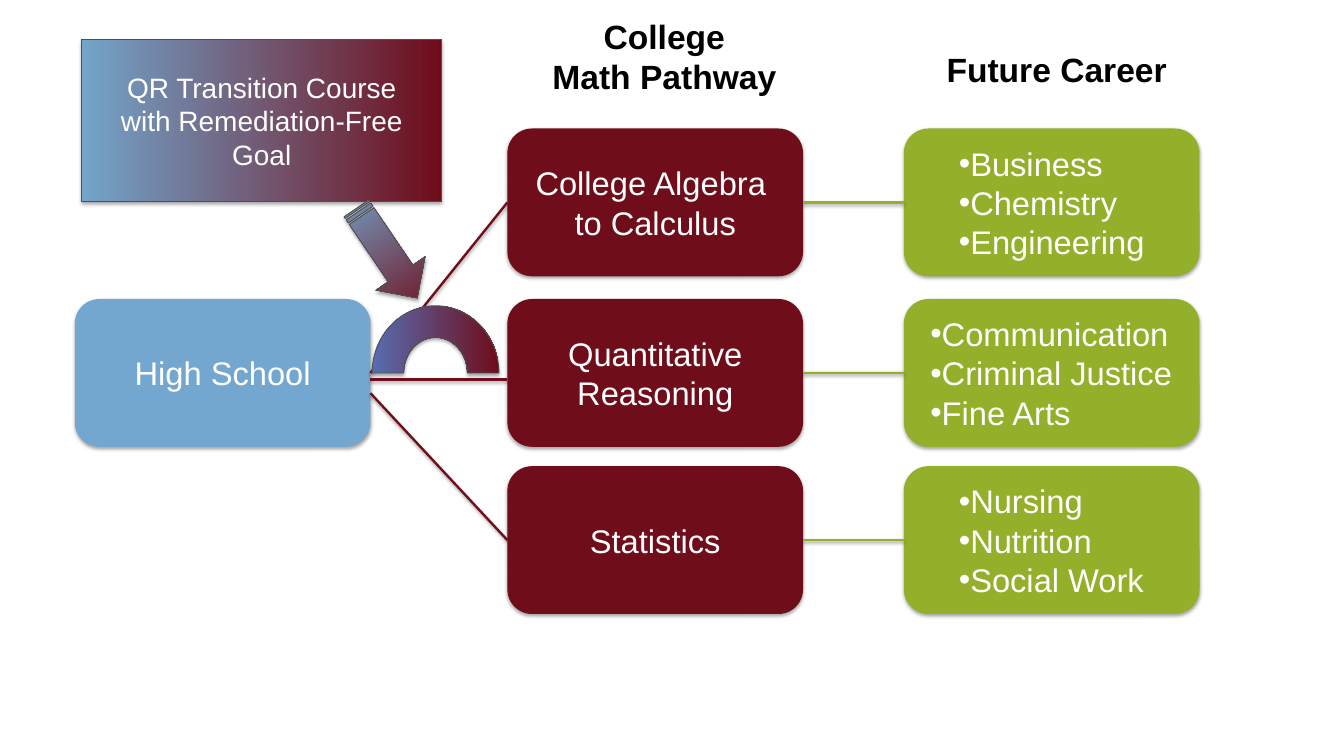
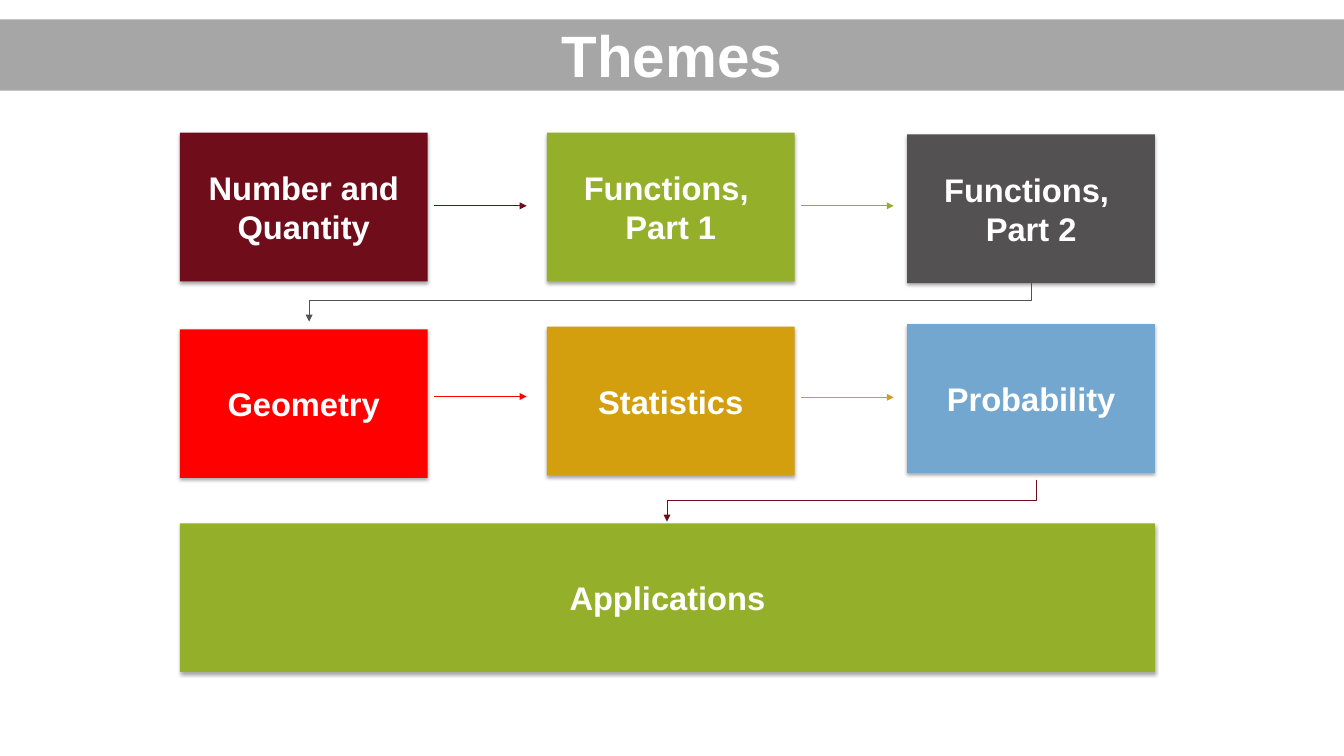
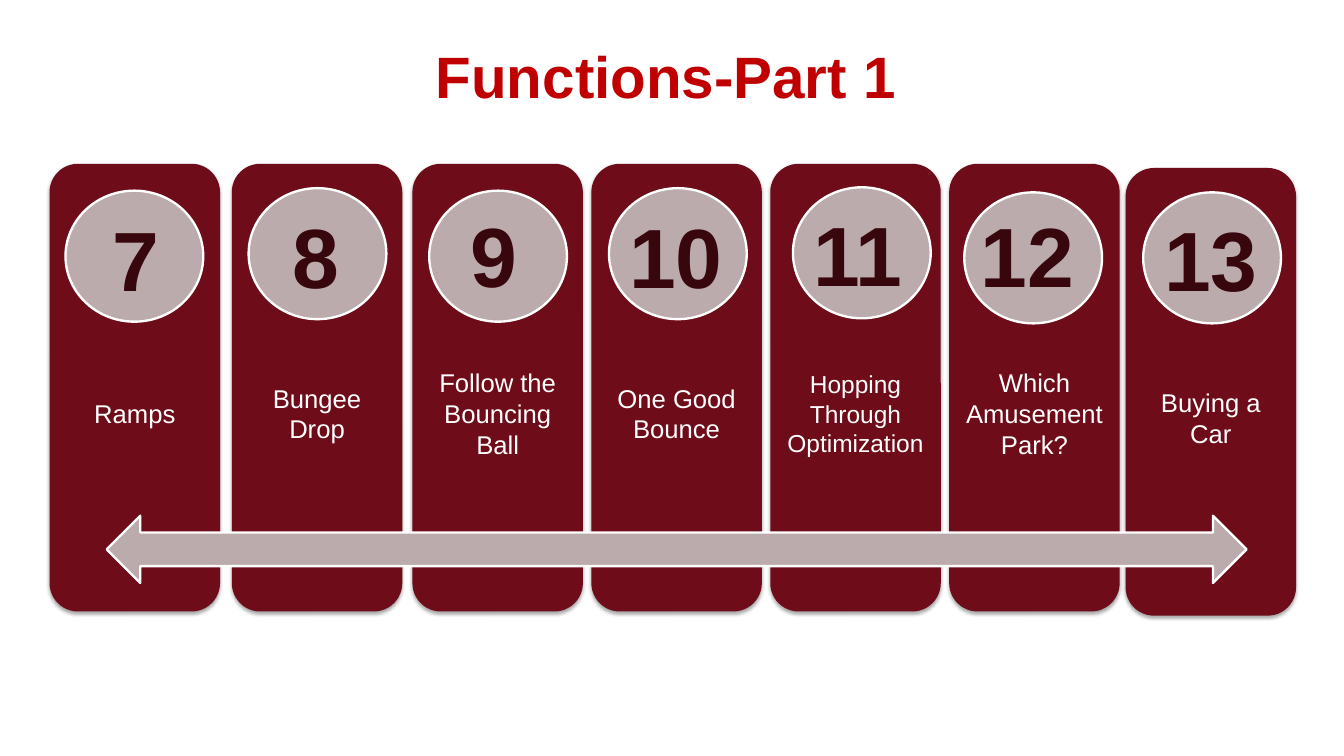
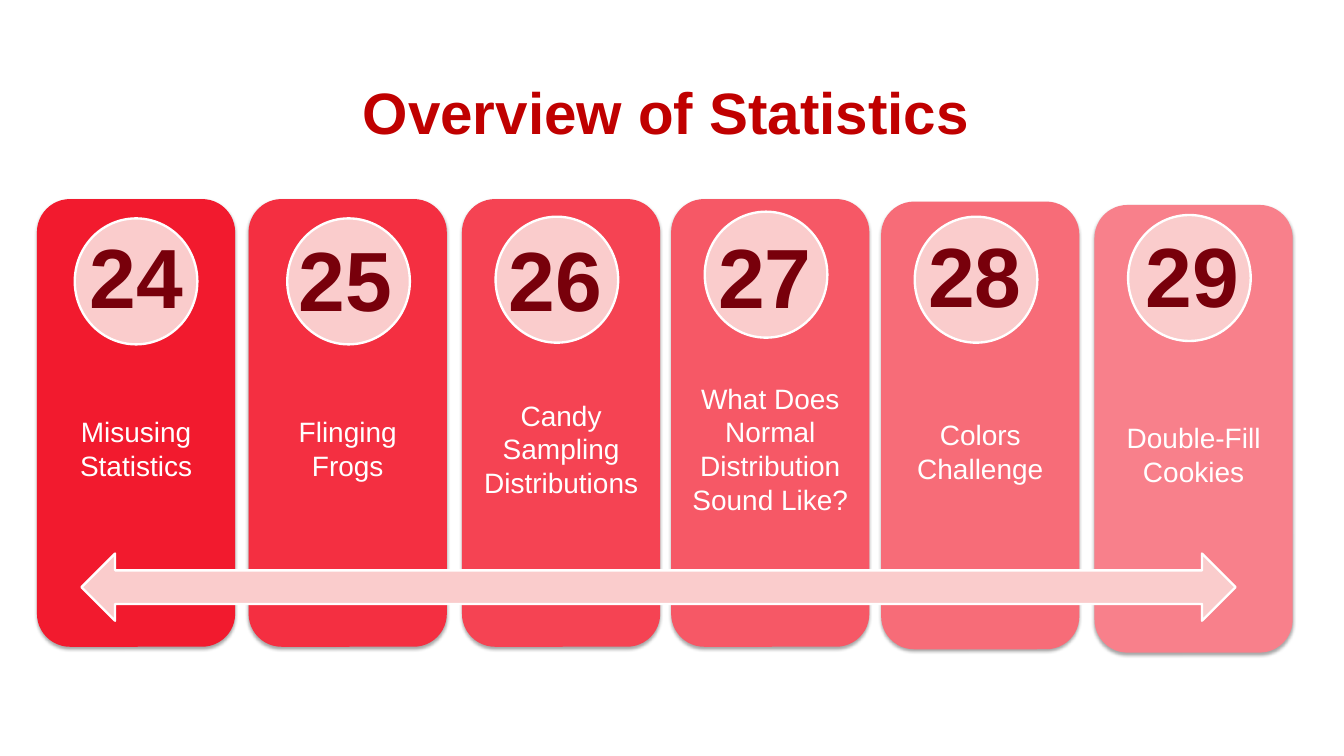
from lxml.etree import SubElement
from pptx import Presentation
from pptx.dml.color import RGBColor
from pptx.enum.shapes import MSO_CONNECTOR, MSO_SHAPE
from pptx.enum.text import MSO_ANCHOR, MSO_AUTO_SIZE, PP_ALIGN
from pptx.oxml.ns import qn
from pptx.util import Inches, Pt

FONT = "Arial"
WHITE, BLACK, MAROON, GREEN = "FFFFFF", "000000", "700D1B", "94AF2A"
BLUE, GRAY, RED, GOLD = "74A7CF", "535151", "FF0000", "D49F0F"
BAND, TITLE_RED, EDGE = "A6A6A6", "C00000", "514E4E"
CARD, BLEND_BLUE, ARC_BLUE = "6F0C1A", "73A5CB", "576DB1"


def paint(shape, fill=None, line=None, width=0.75, shadow=0, distance=1.8):
    if isinstance(fill, tuple):
        shape.fill.gradient()
        shape.fill.gradient_angle = 0
        for stop, shade in zip(shape.fill.gradient_stops, fill):
            stop.color.rgb = RGBColor.from_string(shade)
    elif fill:
        shape.fill.solid()
        shape.fill.fore_color.rgb = RGBColor.from_string(fill)
    if line:
        shape.line.color.rgb = RGBColor.from_string(line)
        shape.line.width = Pt(width)
    else:
        shape.line.fill.background()
    effects = SubElement(shape._element.spPr, qn("a:effectLst"))
    if shadow:
        outer = SubElement(effects, qn("a:outerShdw"), blurRad=str(Pt(3.1)), dist=str(Pt(distance)),
                           dir="5400000", rotWithShape="0")
        tone = SubElement(outer, qn("a:srgbClr"), val=BLACK)
        SubElement(tone, qn("a:alpha"), val=str(shadow * 1000))


def write(shape, text, size, color=WHITE, bold=False, align=PP_ALIGN.CENTER,
          anchor=MSO_ANCHOR.MIDDLE, bullet=False):
    frame = shape.text_frame
    frame.text = text
    frame.word_wrap = True
    frame.auto_size = MSO_AUTO_SIZE.NONE
    frame.vertical_anchor = anchor
    for para in frame.paragraphs:
        para.alignment = align
        if bullet:
            properties = para._p.get_or_add_pPr()
            SubElement(properties, qn("a:buFont"), typeface=FONT)
            SubElement(properties, qn("a:buChar"), char="•")
        for span in para.runs:
            span.font.name = FONT
            span.font.size = Pt(size)
            span.font.bold = bold
            span.font.color.rgb = RGBColor.from_string(color)


deck = Presentation()
deck.slide_width, deck.slide_height = Inches(16), Inches(9)
pages = [deck.slides.add_slide(deck.slide_layouts[5]) for number in range(4)]

page = pages[0]
title = page.shapes.title
title.left, title.top, title.width, title.height = map(Inches, (0.97, 0.47, 4.29, 1.93))
paint(title, (BLEND_BLUE, CARD), EDGE, shadow=35)
write(title, "QR Transition Course\nwith Remediation-Free Goal", 24)

for text, at, align in [
    ("College\nMath Pathway", (6.36, 0.14, 3.1, 1.07), PP_ALIGN.CENTER),
    ("Future Career", (11.17, 0.53, 3.39, 0.59), PP_ALIGN.LEFT),
]:
    box = page.shapes.add_textbox(*map(Inches, at))
    write(box, text, 28.8, BLACK, True, align, MSO_ANCHOR.TOP)

pathway_boxes = []
for text, left, top, fill, indent in [
    ("High School", 0.89, 3.56, BLUE, 0),
    ("College Algebra \vto Calculus", 6.04, 1.53, MAROON, 0),
    ("Quantitative Reasoning", 6.04, 3.56, MAROON, 0),
    ("Statistics", 6.04, 5.55, MAROON, 0),
    ("Business\nChemistry\nEngineering", 10.76, 1.53, GREEN, 0.57),
    ("Communication\nCriminal Justice\nFine Arts", 10.76, 3.56, GREEN, 0.23),
    ("Nursing\nNutrition\nSocial Work", 10.76, 5.55, GREEN, 0.57),
]:
    box = page.shapes.add_shape(MSO_SHAPE.ROUNDED_RECTANGLE, *map(Inches, (left, top, 3.52, 1.76)))
    paint(box, fill, shadow=35)
    if indent:
        write(box, text, 28, align=PP_ALIGN.LEFT, bullet=True)
        box.text_frame.margin_left = Inches(indent)
    else:
        write(box, text, 28)
    pathway_boxes.append(box)

school, algebra, reasoning, statistics, *careers = pathway_boxes
for start, end, source, target, color in [
    ((4.41, 4.44), (6.04, 2.41), school, algebra, MAROON),
    ((4.41, 4.52), (6.04, 4.52), None, None, MAROON),
    ((4.41, 4.68), (6.04, 6.43), None, statistics, MAROON),
    ((9.56, 2.41), (10.76, 2.41), algebra, careers[0], GREEN),
    ((9.56, 4.44), (10.76, 4.44), reasoning, careers[1], GREEN),
    ((9.56, 6.43), (10.76, 6.43), statistics, careers[2], GREEN),
]:
    link = page.shapes.add_connector(MSO_CONNECTOR.STRAIGHT, *map(Inches, start + end))
    if source:
        link.begin_connect(source, 3)
    if target:
        link.end_connect(target, 1)
    paint(link, line=color, width=2, shadow=38, distance=1.6)

for kind, at, rotation, blend in [
    (MSO_SHAPE.STRIPED_RIGHT_ARROW, (3.96, 2.66, 1.29, 0.71), 55.8, (BLEND_BLUE, CARD)),
    (MSO_SHAPE.BLOCK_ARC, (4.43, 3.64, 1.51, 1.6), 0, (ARC_BLUE, CARD)),
]:
    bridge = page.shapes.add_shape(kind, *map(Inches, at))
    bridge.rotation = rotation
    paint(bridge, blend, EDGE, shadow=35)

for page, text, left, top, color in [
    (pages[1], "Themes", 2.6, 0.23, WHITE),
    (pages[2], "Functions-Part 1", 2.53, 0.48, TITLE_RED),
    (pages[3], "Overview of Statistics", 2.53, 0.91, TITLE_RED),
]:
    title = page.shapes.title
    title.left, title.top, title.width, title.height = map(Inches, (left, top, 10.8, 0.85))
    write(title, text, 50, color, True, anchor=MSO_ANCHOR.TOP)
    frame = title.text_frame
    frame.margin_left = frame.margin_right = frame.margin_top = frame.margin_bottom = 0

page = pages[1]
band = page.shapes.add_shape(MSO_SHAPE.RECTANGLE, *map(Inches, (0, 0.23, 16, 0.85)))
paint(band, BAND)
page.shapes.title._element.addprevious(band._element)

for text, left, top, width, fill in [
    ("Number and Quantity", 2.14, 1.58, 2.95, MAROON),
    ("Functions, \vPart 1", 6.51, 1.58, 2.95, GREEN),
    ("Functions, \vPart 2", 10.8, 1.6, 2.95, GRAY),
    ("Geometry", 2.14, 3.92, 2.95, RED),
    ("Statistics", 6.51, 3.89, 2.95, GOLD),
    ("Probability", 10.8, 3.86, 2.95, BLUE),
    ("Applications", 2.14, 6.23, 11.61, GREEN),
]:
    box = page.shapes.add_shape(MSO_SHAPE.RECTANGLE, *map(Inches, (left, top, width, 1.77)))
    paint(box, fill, shadow=35)
    write(box, text, 28, bold=True)

for x1, y1, x2, y2, color in [
    (5.17, 2.45, 6.27, 2.45, MAROON),
    (9.54, 2.45, 10.64, 2.45, GREEN),
    (12.28, 3.33, 3.68, 3.83, GRAY),
    (5.17, 4.72, 6.27, 4.72, RED),
    (9.54, 4.73, 10.64, 4.73, GOLD),
    (12.34, 5.71, 7.94, 6.21, MAROON),
]:
    if y1 == y2:
        arrow = page.shapes.add_connector(MSO_CONNECTOR.STRAIGHT, *map(Inches, (x1, y1, x2, y2)))
    else:
        middle_x, middle_y = (x1 + x2) / 2, (y1 + y2) / 2
        half_width, half_height = (y2 - y1) / 2, (x1 - x2) / 2
        arrow = page.shapes.add_connector(MSO_CONNECTOR.ELBOW, *map(Inches, (
            middle_x - half_width, middle_y - half_height,
            middle_x + half_width, middle_y + half_height)))
        arrow._element.spPr.find(qn("a:xfrm")).set("rot", "5400000")
    paint(arrow, line=color)
    SubElement(arrow.line._get_or_add_ln(), qn("a:tailEnd"), type="triangle")

function_cards = [
    ("7", "Ramps", CARD, 22, (0.59, 1.95), (0.78, 2.27), (1.24, 2.42)),
    ("8", "Bungee Drop", CARD, 22, (2.76, 1.95), (2.96, 2.24), (3.38, 2.38)),
    ("9", "Follow the Bouncing Ball", CARD, 22, (4.91, 1.95), (5.11, 2.27), (5.5, 2.37)),
    ("10", "One Good Bounce", CARD, 22, (7.04, 1.95), (7.25, 2.24), (7.39, 2.38)),
    ("11", "Hopping Through Optimization", CARD, 21, (9.17, 1.95), (9.44, 2.23), (9.59, 2.36)),
    ("12", "Which Amusement Park?", CARD, 22, (11.3, 1.95), (11.48, 2.29), (11.58, 2.37)),
    ("13", "Buying a Car", CARD, 22, (13.4, 2), (13.61, 2.29), (13.76, 2.42)),
]
statistics_cards = [
    ("24", "Misusing Statistics", "F21A2E", 24, (0.44, 2.37), (0.89, 2.6), (0.97, 2.62)),
    ("25", "Flinging Frogs", "F42F41", 24, (2.96, 2.37), (3.42, 2.6), (3.46, 2.66)),
    ("26", "Candy Sampling Distributions", "F54353", 24, (5.5, 2.37), (5.9, 2.58), (5.96, 2.66)),
    ("27", "What Does Normal Distribution Sound Like?", "F65866", 24, (7.99, 2.37), (8.39, 2.52), (8.45, 2.62)),
    ("28", "Colors Challenge", "F76C78", 24, (10.49, 2.4), (10.89, 2.58), (10.95, 2.61)),
    ("29", "Double-Fill Cookies", "F8808B", 24, (13.03, 2.44), (13.43, 2.56), (13.54, 2.61)),
]
for page, cards, card_size, circle_size, arrow_at, pale, dark in [
    (pages[2], function_cards, (2.03, 5.33), (1.64, 1.56), (1.27, 6.14, 13.57, 0.8), "BBABAC", "38060D"),
    (pages[3], statistics_cards, (2.36, 5.33), (1.46, 1.5), (0.97, 6.59, 13.74, 0.8), "FACCCC", "78000B"),
]:
    for number, caption, fill, size, card_at, circle_at, number_at in cards:
        card = page.shapes.add_shape(MSO_SHAPE.ROUNDED_RECTANGLE, *map(Inches, card_at + card_size))
        paint(card, fill, shadow=35)
        write(card, caption, size)
        card.text_frame.margin_top = Inches(0.66)
        circle = page.shapes.add_shape(MSO_SHAPE.OVAL, *map(Inches, circle_at + circle_size))
        paint(circle, pale, WHITE, 2)
        label = page.shapes.add_textbox(*map(Inches, number_at + (1.34, 1.31)))
        write(label, number, 72, dark, True, PP_ALIGN.LEFT, MSO_ANCHOR.TOP)
    arrow = page.shapes.add_shape(MSO_SHAPE.LEFT_RIGHT_ARROW, *map(Inches, arrow_at))
    paint(arrow, pale, WHITE, 2)

deck.save("out.pptx")
